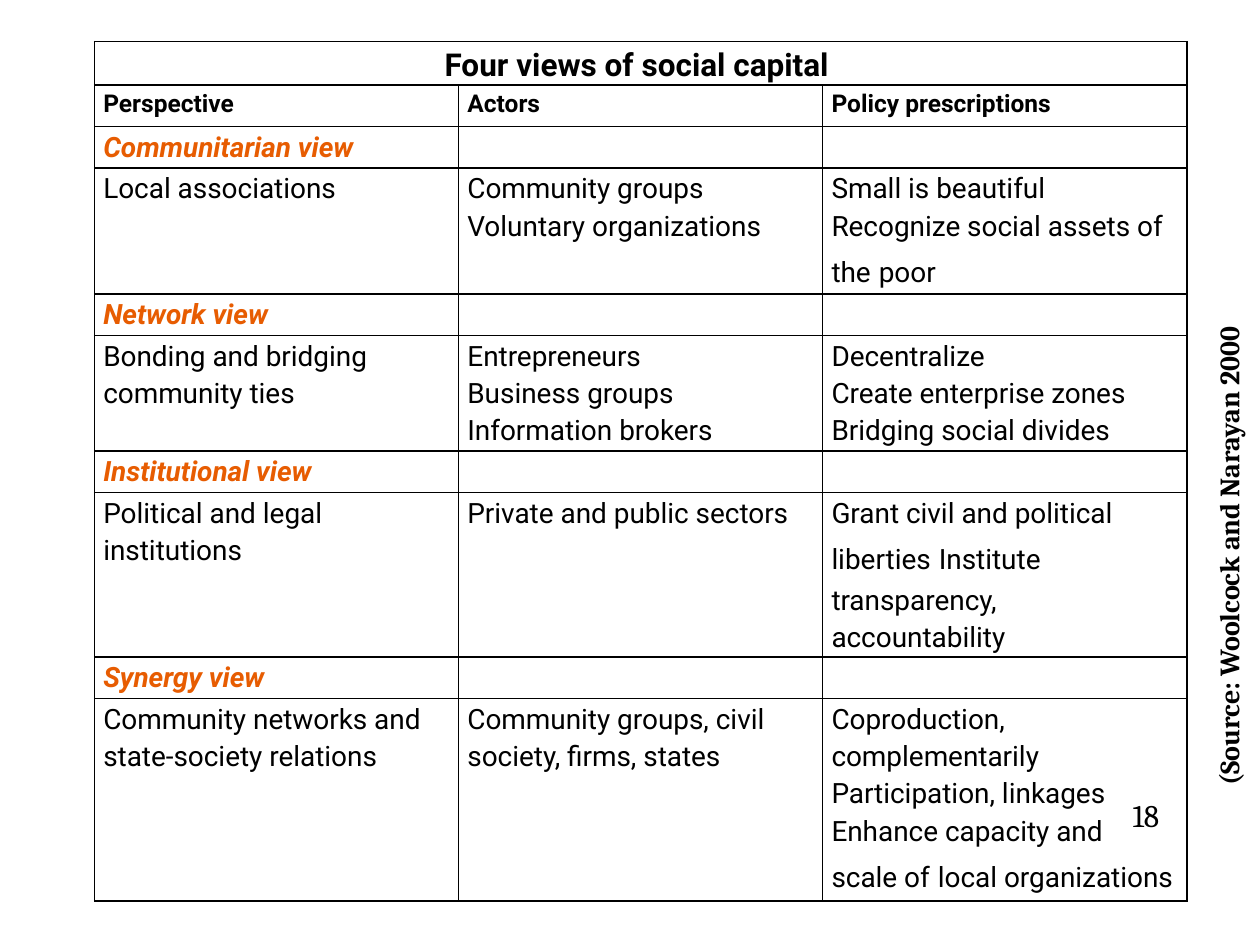
from dataclasses import dataclass

from lxml import etree
from pptx import Presentation
from pptx import util as u
from pptx.dml import color
from pptx.enum import text
from pptx.oxml import ns

BLACK = "000000"
ORANGE = "E75C01"
COLUMN_COUNT = 3
COLUMN_WIDTH = 2.89


@dataclass(frozen=True)
class Style:
    size: float
    font: str = "Roboto"
    ink: str = BLACK
    bold: bool = False
    italic: bool = False


TITLE = Style(18, bold=True)
HEADING = Style(14, bold=True)
VIEW = Style(16, ink=ORANGE, bold=True, italic=True)
BODY = Style(16)
WIDE_SPACE = Style(20, "Calibri")
PAGE_NUMBER = Style(18, "Cambria")
SOURCE = Style(16, "Cambria", bold=True)

Line = tuple[str, ...]


@dataclass(frozen=True)
class View:
    name: str
    height: float
    perspective: list[Line]
    actors: list[Line]
    policies: list[Line]


VIEWS = [
    View(
        "Communitarian view", 0.91,
        [("Local associations",)],
        [("Community groups",), ("Voluntary organizations",)],
        [("Small is beautiful",), ("Recognize social assets of the", " ", "poor")],
    ),
    View(
        "Network view", 0.91,
        [("Bonding and bridging",), ("community ties",)],
        [("Entrepreneurs",), ("Business groups",), ("Information brokers",)],
        [("Decentralize",), ("Create enterprise zones",), ("Bridging social divides",)],
    ),
    View(
        "Institutional view", 0.91,
        [("Political and legal institutions",)],
        [("Private and public sectors",)],
        [("Grant civil and political liberties", " ", "Institute transparency,"),
         ("accountability",)],
    ),
    View(
        "Synergy view", 1.21,
        [("Community networks and",), ("state-society relations",)],
        [("Community groups, civil",), ("society, firms, states",)],
        [("Coproduction, complementarily",), ("Participation, linkages",),
         ("Enhance capacity and",), ("scale of", " ", "local organizations")],
    ),
]


def rgb(value: str) -> color.RGBColor:
    return color.RGBColor.from_string(value)


def add_run(paragraph, words: str, style: Style) -> None:
    run = paragraph.add_run()
    run.text = words
    run.font.size = u.Pt(style.size)
    run.font.name = style.font
    run.font.bold = style.bold
    run.font.italic = style.italic
    run.font.color.rgb = rgb(style.ink)


def add_label(slide, words: str, style: Style, left: float, top: float,
              width: float, height: float, rotation: float = 0) -> None:
    label = slide.shapes.add_textbox(
        u.Inches(left), u.Inches(top), u.Inches(width), u.Inches(height))
    label.rotation = rotation
    label.text_frame.word_wrap = True
    add_run(label.text_frame.paragraphs[0], words, style)


def format_cell(cell) -> None:
    cell.margin_left = cell.margin_right = u.Inches(0.07)
    cell.margin_top = cell.margin_bottom = 0
    properties = cell._tc.get_or_add_tcPr()
    for side in ("a:lnL", "a:lnR", "a:lnT", "a:lnB"):
        border = etree.SubElement(properties, ns.qn(side), w=str(u.Pt(1)))
        fill = etree.SubElement(border, ns.qn("a:solidFill"))
        etree.SubElement(fill, ns.qn("a:srgbClr"), val=BLACK)
    cell.fill.background()


def write_cell(cell, lines: list[Line], style: Style) -> None:
    for index, line in enumerate(lines):
        frame = cell.text_frame
        paragraph = frame.add_paragraph() if index else frame.paragraphs[0]
        paragraph.line_spacing = 1.15
        for words in line:
            add_run(paragraph, words, WIDE_SPACE if words == " " else style)


def add_views_table(slide) -> None:
    heights = [0.3, 0.33]
    for view in VIEWS:
        heights += [0.33, view.height]
    table = slide.shapes.add_table(
        len(heights), COLUMN_COUNT, u.Inches(0.75), u.Inches(0.33),
        u.Inches(COLUMN_WIDTH * COLUMN_COUNT), u.Inches(sum(heights))).table
    table.first_row = table.horz_banding = False
    for column in table.columns:
        column.width = u.Inches(COLUMN_WIDTH)
    for row, height in zip(table.rows, heights):
        row.height = u.Inches(height)
    for cell in table.iter_cells():
        format_cell(cell)

    title = table.cell(0, 0)
    title.merge(table.cell(0, COLUMN_COUNT - 1))
    write_cell(title, [("Four views of social capital ",)], TITLE)
    title.text_frame.paragraphs[0].alignment = text.PP_ALIGN.CENTER
    for column, heading in enumerate(("Perspective", "Actors", "Policy prescriptions")):
        write_cell(table.cell(1, column), [(heading,)], HEADING)
    for index, view in enumerate(VIEWS):
        name_row = 2 + 2 * index
        write_cell(table.cell(name_row, 0), [(view.name,)], VIEW)
        for column, lines in enumerate((view.perspective, view.actors, view.policies)):
            write_cell(table.cell(name_row + 1, column), lines, BODY)


def main() -> None:
    deck = Presentation()
    deck.slide_width = u.Inches(10)
    deck.slide_height = u.Inches(7.5)
    slide = deck.slides.add_slide(deck.slide_layouts[6])
    add_label(slide, "18", PAGE_NUMBER, 8.89, 6.27, 0.67, 0.57)
    add_label(slide, "(Source: Woolcock and Narayan 2000", SOURCE,
              7.25, 3.65, 5, 0.37, rotation=270)
    add_views_table(slide)
    deck.save("out.pptx")


if __name__ == "__main__":
    main()
